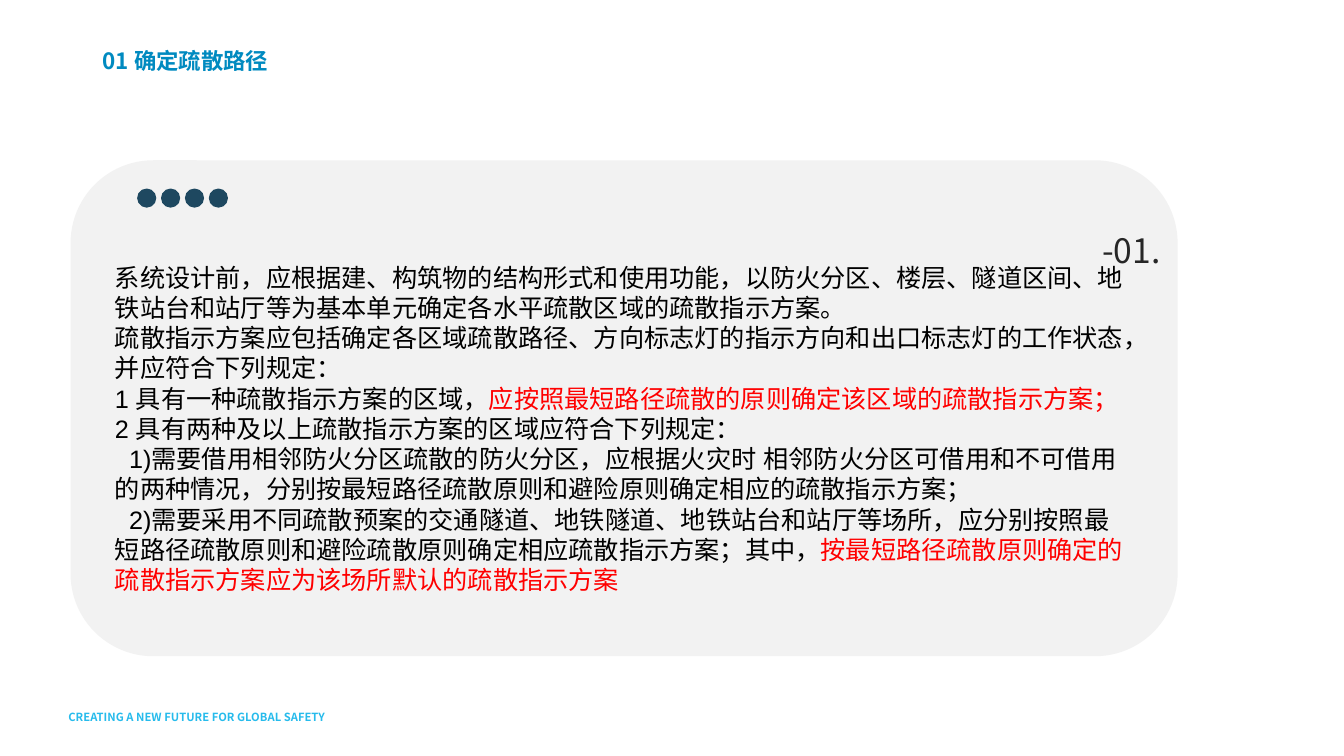
"""Build the evacuation route slide."""
from dataclasses import dataclass

import lxml.etree
import pptx
import pptx.dml.color
import pptx.enum.shapes
import pptx.enum.text
import pptx.oxml.ns
import pptx.util

Inches = pptx.util.Inches
SHAPES = pptx.enum.shapes.MSO_SHAPE
ALIGN = pptx.enum.text.PP_ALIGN
ANCHOR = pptx.enum.text.MSO_ANCHOR

COLORS = {
    "footer": "26BBEC",
    "title": "008AC0",
    "panel": "F2F2F2",
    "dot": "1E4860",
    "body": "000000",
    "emphasis": "FF0000",
    "number": "262626",
}
SANS = "Noto Sans CJK SC"
DOT_COUNT = 4
DOT_SIZE = 0.19
DOT_PITCH = 0.237


@dataclass
class Box:
    left: float
    top: float
    width: float
    height: float


@dataclass
class Clause:
    text: str
    emphasis: str = ""
    indent: float = 0


CLAUSES = [
    Clause("系统设计前，应根据建、构筑物的结构形式和使用功能，以防火分区、楼层、隧道区间、地铁站台和站厅等为基本单元确定各水平疏散区域的疏散指示方案。"),
    Clause("疏散指示方案应包括确定各区域疏散路径、方向标志灯的指示方向和出口标志灯的工作状态，并应符合下列规定："),
    Clause("1 具有一种疏散指示方案的区域，", "应按照最短路径疏散的原则确定该区域的疏散指示方案；"),
    Clause("2 具有两种及以上疏散指示方案的区域应符合下列规定："),
    Clause(
        "1)需要借用相邻防火分区疏散的防火分区，应根据火灾时 相邻防火分区可借用和不可借用的两种情况，分别按最短路径疏散原则和避险原则确定相应的疏散指示方案；",
        indent=0.14,
    ),
    Clause(
        "2)需要采用不同疏散预案的交通隧道、地铁隧道、地铁站台和站厅等场所，应分别按照最短路径疏散原则和避险疏散原则确定相应疏散指示方案；其中，",
        "按最短路径疏散原则确定的疏散指示方案应为该场所默认的疏散指示方案",
        indent=0.14,
    ),
]


def add_shape(page, kind, box: Box, color: str):
    shape = page.shapes.add_shape(
        kind, Inches(box.left), Inches(box.top), Inches(box.width), Inches(box.height)
    )
    shape.shadow.inherit = False
    shape.fill.solid()
    shape.fill.fore_color.rgb = pptx.dml.color.RGBColor.from_string(COLORS[color])
    shape.line.fill.background()
    return shape


def add_span(para, text: str, color: str, size: float, font: str, bold: bool) -> None:
    span = para.add_run()
    span.text = text
    span.font.name = font
    span.font.size = pptx.util.Pt(size)
    span.font.bold = bold
    span.font.color.rgb = pptx.dml.color.RGBColor.from_string(COLORS[color])
    east_asian = lxml.etree.SubElement(span.font._element, pptx.oxml.ns.qn("a:ea"))
    east_asian.set("typeface", font)


def add_text(page, box: Box, clauses: list[Clause], *, color: str, size: float,
             font: str = SANS, bold: bool = False, wrap: bool = True,
             align=ALIGN.LEFT, anchor=ANCHOR.TOP,
             inset_x: float = 0, inset_y: float = 0) -> None:
    text_box = page.shapes.add_textbox(
        Inches(box.left), Inches(box.top), Inches(box.width), Inches(box.height)
    )
    frame = text_box.text_frame
    frame.word_wrap = wrap
    frame.vertical_anchor = anchor
    frame.margin_left = frame.margin_right = Inches(inset_x)
    frame.margin_top = frame.margin_bottom = Inches(inset_y)
    for index, clause in enumerate(clauses):
        para = frame.add_paragraph() if index else frame.paragraphs[0]
        para.alignment = align
        if clause.indent:
            properties = para._p.get_or_add_pPr()
            properties.set("marL", "0")
            properties.set("indent", str(Inches(clause.indent)))
        add_span(para, clause.text, color, size, font, bold)
        if clause.emphasis:
            add_span(para, clause.emphasis, "emphasis", size, font, bold)


def main() -> None:
    deck = pptx.Presentation()
    deck.slide_width = Inches(13.33)
    deck.slide_height = Inches(7.5)
    page = deck.slides.add_slide(deck.slide_layouts[6])

    add_text(page, Box(0.58, 7, 2.93, 0.24),
             [Clause("CREATING A NEW FUTURE FOR GLOBAL SAFETY")],
             color="footer", size=8, bold=True, wrap=False, inset_x=0.1, inset_y=0.05)
    add_text(page, Box(0.92, 0.39, 2.32, 0.39), [Clause("01 确定疏散路径")],
             color="title", size=16, bold=True, wrap=False, anchor=ANCHOR.BOTTOM,
             inset_x=0.1, inset_y=0.05)

    add_shape(page, SHAPES.ROUNDED_RECTANGLE, Box(0.7, 1.59, 10.98, 4.92), "panel")
    for index in range(DOT_COUNT):
        dot = Box(1.36 + index * DOT_PITCH, 1.87, DOT_SIZE, DOT_SIZE)
        add_shape(page, SHAPES.OVAL, dot, "dot")

    add_text(page, Box(1.14, 2.6, 10.1, 3.33), CLAUSES,
             color="body", size=18, font="Arial")
    add_text(page, Box(7.33, 2.28, 4.18, 0.45), [Clause("-01.")],
             color="number", size=24, align=ALIGN.RIGHT)
    deck.save("out.pptx")


if __name__ == "__main__":
    main()
